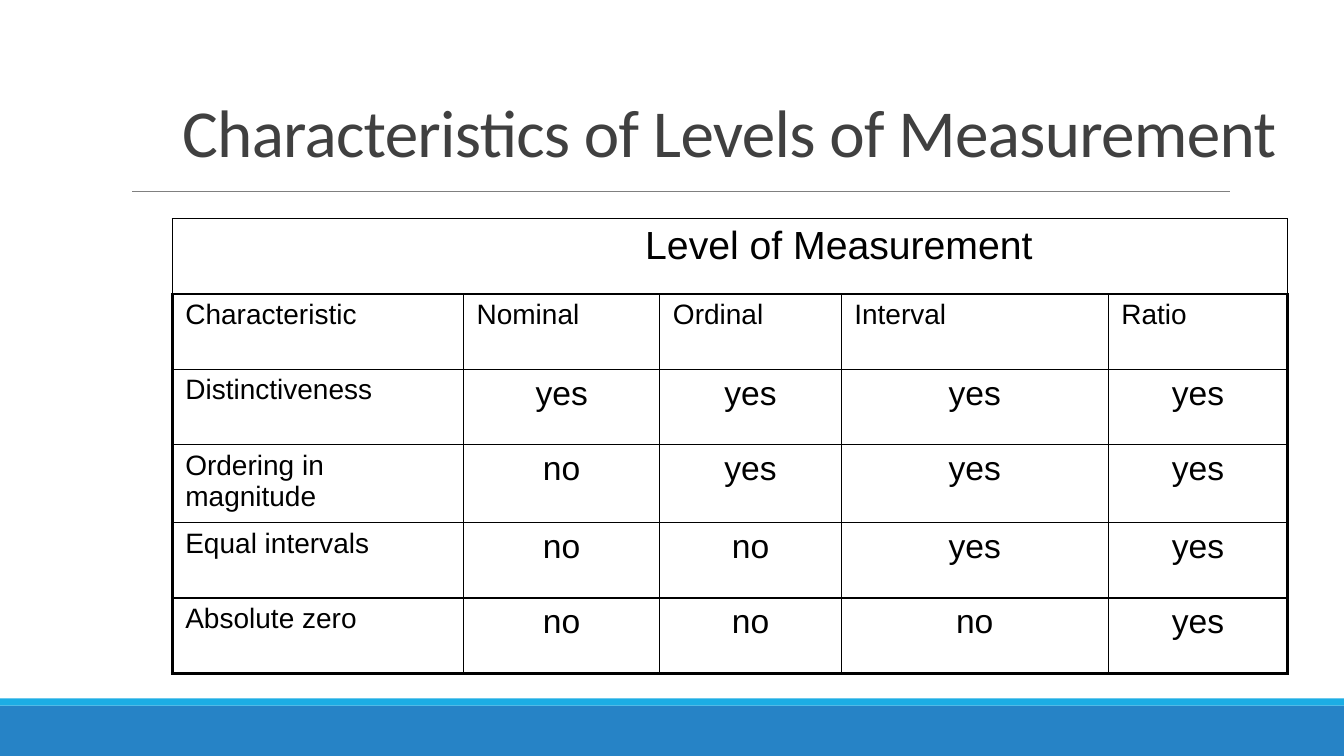
from lxml.etree import SubElement
from pptx import Presentation
from pptx.dml.color import RGBColor
from pptx.enum.shapes import MSO_CONNECTOR, MSO_SHAPE
from pptx.enum.text import MSO_ANCHOR, PP_ALIGN
from pptx.oxml import parse_xml
from pptx.oxml.ns import nsdecls, qn
from pptx.util import Cm, Pt

BLACK = RGBColor(0x00, 0x00, 0x00)
DARK = RGBColor(0x40, 0x40, 0x40)
GRAY = RGBColor(0x80, 0x80, 0x80)
BLUE = RGBColor(0x26, 0x83, 0xC6)
CYAN = RGBColor(0x1C, 0xAD, 0xE4)

THIN, THICK = 1, 2.25
COLS = [7.34, 4.95, 4.57, 6.73, 4.52]
ROWS = [1.9, 1.9, 1.9, 1.96, 1.9, 1.9]
HEAD = "Level of Measurement"
BODY = [
    ["Characteristic", "Nominal", "Ordinal", "Interval", "Ratio"],
    ["Distinctiveness", "yes", "yes", "yes", "yes"],
    ["Ordering in magnitude", "no", "yes", "yes", "yes"],
    ["Equal intervals", "no", "no", "yes", "yes"],
    ["Absolute zero", "no", "no", "no", "yes"],
]


def add_run(para, text, size, font, color):
    """Append one styled run to a paragraph and return it."""
    run = para.add_run()
    run.text = text
    run.font.size = Pt(size)
    run.font.name = font
    run.font.color.rgb = color
    return run


def add_band(slide, top, height, color):
    """Draw a plain band across the full slide width."""
    band = slide.shapes.add_shape(
        MSO_SHAPE.RECTANGLE, Cm(0), Cm(top), Cm(33.87), Cm(height))
    band.shadow.inherit = False
    band.fill.solid()
    band.fill.fore_color.rgb = color
    band.line.fill.background()


def add_rule(slide, left, right, top):
    """Draw the thin rule below the title."""
    rule = slide.shapes.add_connector(
        MSO_CONNECTOR.STRAIGHT, Cm(left), Cm(top), Cm(right), Cm(top))
    rule.line.color.rgb = GRAY
    rule.line.width = Pt(0.5)
    SubElement(rule._element.spPr, qn("a:effectLst"))


def add_title(slide, text):
    """Place the title, set on the bottom of its box."""
    box = slide.shapes.add_textbox(Cm(4.34), Cm(1.27), Cm(28.78), Cm(3.18))
    frame = box.text_frame
    frame.word_wrap = True
    frame.vertical_anchor = MSO_ANCHOR.BOTTOM
    para = frame.paragraphs[0]
    para.line_spacing = 0.85
    run = add_run(para, text, 48, "Calibri", DARK)
    run.font._element.set("spc", "-50")


def set_edges(cell, widths):
    """Set black left, right, top and bottom borders in points."""
    props = cell._tc.get_or_add_tcPr()
    for pos, (side, width) in enumerate(zip("LRTB", widths)):
        props.insert(pos, parse_xml(
            f'<a:ln{side} {nsdecls("a")} w="{int(Pt(width))}"><a:solidFill>'
            f'<a:srgbClr val="{BLACK}"/></a:solidFill></a:ln{side}>'))


def fill_cell(cell, text, size, align):
    """Write one cell with its margins and no fill, and return its paragraph."""
    cell.fill.background()
    cell.margin_left = cell.margin_right = Cm(0.33)
    cell.margin_top = cell.margin_bottom = Cm(0.13)
    para = cell.text_frame.paragraphs[0]
    para.alignment = align
    add_run(para, text, size, "Arial", BLACK)
    return para


def add_grid(slide):
    """Build the table of levels with a heavy frame around its body."""
    frame = slide.shapes.add_table(
        len(ROWS), len(COLS), Cm(4.34), Cm(5.51), Cm(sum(COLS)), Cm(sum(ROWS)))
    table = frame.table
    table.first_row = table.horz_banding = False
    for col, width in zip(table.columns, COLS):
        col.width = Cm(width)
    for row, height in zip(table.rows, ROWS):
        row.height = Cm(height)

    head = table.cell(0, 0)
    head.merge(table.cell(0, len(COLS) - 1))
    para = fill_cell(head, HEAD, 28, PP_ALIGN.CENTER)
    para._p.get_or_add_pPr().set("marL", str(int(Cm(5.49))))
    set_edges(head, [THIN] * 4)

    for r, line in enumerate(BODY, 1):
        for c, text in enumerate(line):
            cell = table.cell(r, c)
            label = r == 1 or c == 0
            fill_cell(cell, text, 20 if label else 24,
                      PP_ALIGN.LEFT if label else PP_ALIGN.CENTER)
            set_edges(cell, [
                THICK if c == 0 else THIN,
                THICK if c == len(COLS) - 1 else THIN,
                THIN,
                THICK if r == len(BODY) else THIN,
            ])


def main():
    """Build and save the slide."""
    deck = Presentation()
    deck.slide_width, deck.slide_height = Cm(33.87), Cm(19.05)
    slide = deck.slides.add_slide(deck.slide_layouts[6])
    add_band(slide, 17.78, 1.27, BLUE)
    add_band(slide, 17.6, 0.18, CYAN)
    add_rule(slide, 3.33, 31, 4.83)
    add_title(slide, "Characteristics of Levels of Measurement")
    add_grid(slide)
    deck.save("out.pptx")


if __name__ == "__main__":
    main()
